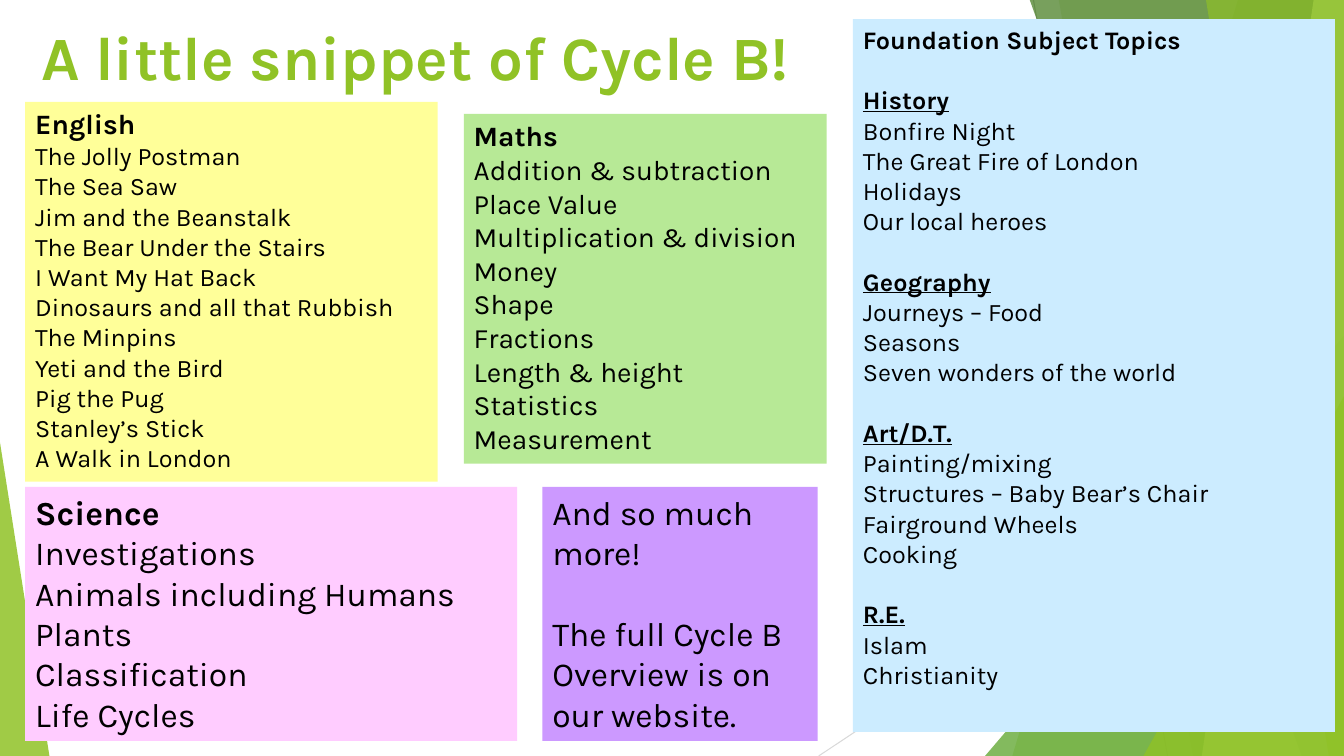
from pptx import Presentation
from pptx.dml.color import RGBColor
from pptx.enum.shapes import MSO_CONNECTOR, MSO_SHAPE
from pptx.enum.text import MSO_ANCHOR, PP_ALIGN
from pptx.oxml.ns import qn
from pptx.util import Pt
from lxml import etree

LINE = MSO_CONNECTOR.STRAIGHT
RECT = MSO_SHAPE.RECTANGLE
WEDGE = MSO_SHAPE.ISOSCELES_TRIANGLE
TOP = MSO_ANCHOR.TOP
LEFT = PP_ALIGN.LEFT
PX = 9144
WIDE, HIGH = 1333, 750
LEAD = 1.2


def tint(code):
    return RGBColor.from_string(code)


class Deck:
    """Holds the font, the colours and the slide, and draws each kind of element."""

    font = "Karla"
    ink = "000000"
    green = "90C226"

    def __init__(self):
        self.file = Presentation()
        self.file.slide_width, self.file.slide_height = WIDE * PX, HIGH * PX
        self.slide = self.file.slides.add_slide(self.file.slide_layouts[6])
        self.shapes = self.slide.shapes

    def paint(self, shape, code, alpha=100):
        shape.shadow.inherit = False
        shape.fill.solid()
        shape.fill.fore_color.rgb = tint(code)
        shape.line.fill.background()
        if alpha < 100:
            color = shape._element.spPr.find(qn("a:solidFill"))[0]
            etree.SubElement(color, qn("a:alpha"), val=str(alpha * 1000))

    def line(self, start, end, code):
        line = self.shapes.add_connector(LINE, *(n * PX for n in start + end))
        line.line.color.rgb = tint(code)
        line.line.width = Pt(0.75)
        etree.SubElement(line._element.spPr, qn("a:effectLst"))

    def band(self, top, base, code, alpha):
        pen = self.shapes.build_freeform(top, -1, scale=PX)
        pen.add_line_segments([(WIDE, -1), (WIDE, HIGH), (base, HIGH)])
        self.paint(pen.convert_to_shape(), code, alpha)

    def wedge(self, box, tip, code, alpha):
        shape = self.shapes.add_shape(WEDGE, *(n * PX for n in box))
        shape.adjustments[0] = tip
        self.paint(shape, code, alpha)

    def words(self, para, text, size, code, style=""):
        para.alignment = LEFT
        run = para.add_run()
        run.text = text
        font = run.font
        font.name, font.size = self.font, Pt(size)
        font.color.rgb = tint(code)
        font.bold, font.underline = "b" in style, "u" in style

    def title(self, box, text):
        frame = self.shapes.add_textbox(*(n * PX for n in box)).text_frame
        frame.word_wrap = True
        self.words(frame.paragraphs[0], text, 44, self.green, "b")

    def panel(self, box, code, size, groups, head=None):
        shape = self.shapes.add_shape(RECT, *(n * PX for n in box))
        self.paint(shape, code)
        frame = shape.text_frame
        frame.word_wrap = True
        frame.vertical_anchor = TOP
        para = frame.paragraphs[0]
        for g, (style, *lines) in enumerate(groups):
            for i, text in enumerate(lines):
                if g or i:
                    para = frame.add_paragraph()
                if g and not i:
                    para.space_before = Pt(size * LEAD)
                first = i == 0
                self.words(para, text, head if first and head else size,
                           self.ink, style if first else "")


def main():
    deck = Deck()
    deck.line((1025, 0), (1158, HIGH), "BFBFBF")
    deck.line((WIDE, 403), (812, HIGH), "D9D9D9")
    deck.band(1228, 1004, "90C226", 30)
    deck.band(1050, 1183, "90C226", 20)
    deck.wedge((977, 333, 356, 417), 1, "54A021", 72)
    deck.band(1021, 1291, "3F7819", 70)
    deck.band(1303, 1192, "C0E474", 70)
    deck.band(1196, 1318, "90C226", 65)
    deck.wedge((1134, 393, 199, 357), 1, "90C226", 80)
    deck.wedge((0, 439, 49, 311), 0, "90C226", 85)

    deck.title((31, 14, 940, 144), "A little snippet of Cycle B!")
    deck.panel((25, 101, 409, 377), "FFFF99", 18, [
        ("b", "English", "The Jolly Postman", "The Sea Saw",
         "Jim and the Beanstalk", "The Bear Under the Stairs",
         "I Want My Hat Back", "Dinosaurs and all that Rubbish",
         "The Minpins", "Yeti and the Bird", "Pig the Pug",
         "Stanley’s Stick", "A Walk in London"),
    ], head=20)
    deck.panel((460, 113, 360, 347), "B7E996", 20, [
        ("b", "Maths", "Addition & subtraction", "Place Value",
         "Multiplication & division", "Money", "Shape", "Fractions",
         "Length & height", "Statistics", "Measurement"),
    ])
    deck.panel((25, 483, 488, 252), "FFCCFF", 24, [
        ("b", "Science", "Investigations", "Animals including Humans",
         "Plants", "Classification", "Life Cycles"),
    ])
    deck.panel((846, 19, 478, 707), "CCECFF", 18, [
        ("b", "Foundation Subject Topics"),
        ("bu", "History", "Bonfire Night", "The Great Fire of London",
         "Holidays", "Our local heroes"),
        ("bu", "Geography", "Journeys – Food", "Seasons",
         "Seven wonders of the world"),
        ("bu", "Art/D.T.", "Painting/mixing",
         "Structures – Baby Bear’s Chair", "Fairground Wheels", "Cooking"),
        ("bu", "R.E.", "Islam", "Christianity"),
    ])
    deck.panel((538, 483, 273, 252), "CC99FF", 24, [
        ("", "And so much more!"),
        ("", "The full Cycle B", "Overview is on our website."),
    ])
    deck.file.save("out.pptx")


if __name__ == "__main__":
    main()
